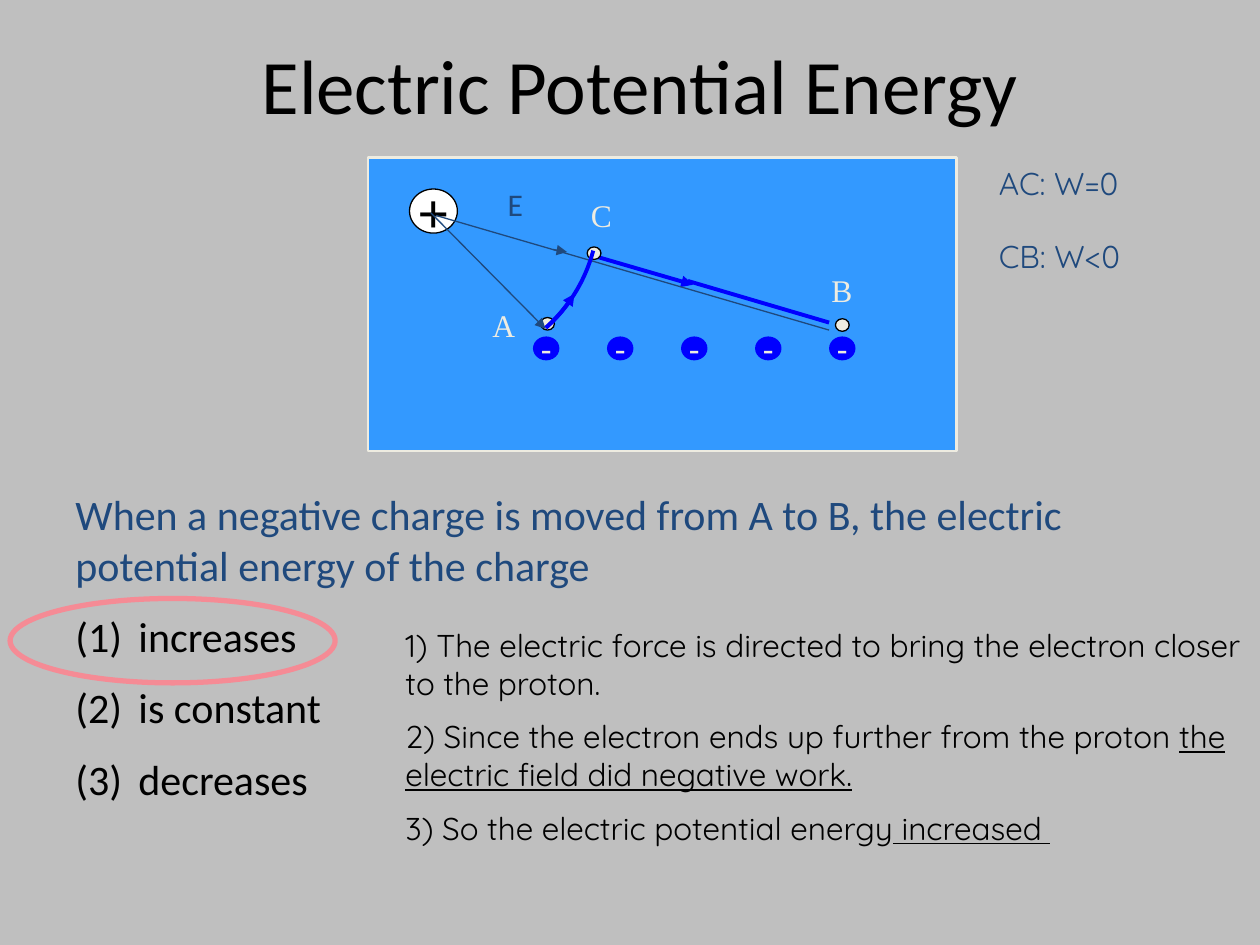
from dataclasses import dataclass
from math import cos, radians, sin

from lxml import etree
from pptx import Presentation
from pptx import util as u
from pptx.dml.color import RGBColor
from pptx.enum import shapes, text
from pptx.oxml.ns import qn


@dataclass(frozen=True)
class Theme:
    back: str = "BFBFBF"
    panel: str = "3399FF"
    cream: str = "EEECE1"
    black: str = "000000"
    white: str = "FFFFFF"
    blue: str = "0000FF"
    navy: str = "1F497D"
    pink: str = "F58B95"
    sans: str = "Calibri"
    serif: str = "Times New Roman"
    rounded: str = "Quicksand"
    title: int = 44
    plus: int = 32
    body: int = 24
    minus: int = 20
    small: int = 18


@dataclass(frozen=True)
class Style:
    name: str
    size: int
    color: str
    bold: bool = False


@dataclass(frozen=True)
class Span:
    text: str
    style: Style
    underline: bool = False


@dataclass(frozen=True)
class Label:
    left: float
    top: float
    width: float
    height: float
    paras: list[list[Span]]
    centered: bool = False
    hanging: float = 0


@dataclass(frozen=True)
class Oval:
    left: float
    top: float
    width: float
    height: float
    fill: str | None = None
    line: str | None = None
    weight: float = 0.75
    sign: Span | None = None


@dataclass(frozen=True)
class Path:
    start: tuple[float, float]
    end: tuple[float, float]
    color: str
    weight: float
    arrow: bool = False


THEME = Theme()
LETTER = Style(THEME.serif, THEME.small, THEME.cream)
FIELD = Style(THEME.sans, THEME.small, THEME.navy)
NOTE = Style(THEME.rounded, THEME.small, THEME.black)
WORK = Style(THEME.rounded, THEME.small, THEME.navy)
TITLE = Style(THEME.sans, THEME.title, THEME.black)
QUESTION = Style(THEME.sans, THEME.body, THEME.navy)
CHOICE = Style(THEME.sans, THEME.body, THEME.black)
PLUS = Style(THEME.serif, THEME.plus, THEME.black, True)
MINUS = Style(THEME.sans, THEME.minus, THEME.cream)

CHARGE_CENTER = (3.5, 1.67)
ARC_RADIUS = 1.25
ANGLE_A, ANGLE_ARROW, ANGLE_C = 48.2, 32, 14.8


def write_span(para, span: Span) -> None:
    run = para.add_run()
    run.text = span.text
    style = span.style
    values = {"name": style.name, "size": u.Pt(style.size), "bold": style.bold,
              "underline": span.underline}
    for key, value in values.items():
        setattr(run.font, key, value)
    run.font.color.rgb = RGBColor.from_string(style.color)


def paint(shape, fill: str | None, line: str | None, weight: float) -> None:
    shape.shadow.inherit = False
    for target, color in ((shape.fill, fill), (shape.line.fill, line)):
        if color:
            target.solid()
            target.fore_color.rgb = RGBColor.from_string(color)
        else:
            target.background()
    if line:
        shape.line.width = u.Pt(weight)


def add_arrowhead(shape) -> None:
    etree.SubElement(shape.line._get_or_add_ln(), qn("a:tailEnd"), type="triangle")


def add_label(page, label: Label) -> None:
    box = page.shapes.add_textbox(*map(u.Inches, (label.left, label.top, label.width, label.height)))
    frame = box.text_frame
    frame.word_wrap = True
    for index, spans in enumerate(label.paras):
        para = frame.paragraphs[0] if index == 0 else frame.add_paragraph()
        if index:
            para.space_before = u.Pt(spans[0].style.size / 2)
        if label.centered:
            para.alignment = text.PP_ALIGN.CENTER
        if label.hanging:
            indent = u.Inches(label.hanging)
            properties = para._p.get_or_add_pPr()
            properties.set("marL", str(indent))
            properties.set("indent", str(-indent))
        for span in spans:
            write_span(para, span)


def add_oval(page, oval: Oval) -> None:
    shape = page.shapes.add_shape(
        shapes.MSO_SHAPE.OVAL, *map(u.Inches, (oval.left, oval.top, oval.width, oval.height)))
    paint(shape, oval.fill, oval.line, oval.weight)
    if oval.sign:
        frame = shape.text_frame
        frame.word_wrap = False
        frame.vertical_anchor = text.MSO_ANCHOR.MIDDLE
        para = frame.paragraphs[0]
        para.alignment = text.PP_ALIGN.CENTER
        write_span(para, oval.sign)


def add_path(page, path: Path) -> None:
    line = page.shapes.add_connector(
        shapes.MSO_CONNECTOR.STRAIGHT, *map(u.Inches, (*path.start, *path.end)))
    line.line.color.rgb = RGBColor.from_string(path.color)
    line.line.width = u.Pt(path.weight)
    if path.arrow:
        add_arrowhead(line)
    etree.SubElement(line._element.spPr, qn("a:effectLst"))


def add_arc(page, first: float, last: float, arrow: bool = False, steps: int = 24) -> None:
    angles = [radians(first + (last - first) * step / steps) for step in range(steps + 1)]
    points = [(u.Inches(CHARGE_CENTER[0] + ARC_RADIUS * cos(angle)),
               u.Inches(CHARGE_CENTER[1] + ARC_RADIUS * sin(angle))) for angle in angles]
    builder = page.shapes.build_freeform(*points[0])
    builder.add_line_segments(points[1:], close=False)
    arc = builder.convert_to_shape()
    paint(arc, None, THEME.blue, 2.25)
    if arrow:
        add_arrowhead(arc)


def add_point(page, left: float, top: float) -> None:
    add_oval(page, Oval(left, top, 0.11, 0.1, THEME.cream, THEME.black))


def main() -> None:
    deck = Presentation()
    deck.slide_width, deck.slide_height = u.Inches(10), u.Inches(7.5)
    page = deck.slides.add_slide(deck.slide_layouts[6])
    page.background.fill.solid()
    page.background.fill.fore_color.rgb = RGBColor.from_string(THEME.back)

    panel = page.shapes.add_shape(
        shapes.MSO_SHAPE.RECTANGLE, *map(u.Inches, (2.92, 1.25, 4.67, 2.33)))
    paint(panel, THEME.panel, THEME.cream, 1.5)

    add_point(page, 4.29, 2.52)
    add_point(page, 6.63, 2.53)
    add_oval(page, Oval(3.25, 1.5, 0.38, 0.35, THEME.white, THEME.black, sign=Span("+", PLUS)))
    for index in range(5):
        add_oval(page, Oval(4.23 + index * 0.5875, 2.67, 0.21, 0.19, THEME.blue,
                            sign=Span("-", MINUS)))

    choices = ("increases", "is constant", "decreases")
    question = "When a negative charge is moved from A to B, the electric potential energy of the charge"
    body = [[Span("\t", FIELD), Span(question, QUESTION)]]
    body += [[Span(f"\t({number})\t{choice}", CHOICE)] for number, choice in enumerate(choices, 1)]
    reasons = [
        [Span("1) The electric force is directed to bring the electron closer to the proton.", NOTE)],
        [Span("2) Since the electron ends up further from the proton ", NOTE),
         Span("the electric field did negative work.", NOTE, True), Span(" ", NOTE)],
        [Span("3) So the electric potential energy", NOTE), Span(" increased ", NOTE, True)],
    ]
    add_label(page, Label(0.33, 0.25, 9.5, 0.83, [[Span("Electric Potential Energy", TITLE)]], True))
    add_label(page, Label(0, 3.83, 9.25, 2.73, body, hanging=0.5))
    add_oval(page, Oval(0.08, 4.75, 2.58, 0.67, line=THEME.pink, weight=3))
    add_label(page, Label(3.12, 4.92, 6.83, 1.9, reasons))

    for path in (
        Path((4.71, 2.03), (5.5, 2.26), THEME.blue, 2.25, True),
        Path((5.46, 2.23), (6.58, 2.56), THEME.blue, 2.25),
        Path((4.39, 1.98), (4.5, 2), THEME.navy, 0.75, True),
        Path((3.42, 1.69), (4.33, 2.61), THEME.navy, 0.75, True),
        Path((3.46, 1.71), (6.58, 2.62), THEME.navy, 0.75),
    ):
        add_path(page, path)

    for name, left, top, width, style in (
        ("A", 3.81, 2.38, 0.5, LETTER),
        ("B", 6.5, 2.1, 0.52, LETTER),
        ("C", 4.59, 1.51, 0.52, LETTER),
        ("E", 3.93, 1.42, 0.5, FIELD),
        ("AC: W=0", 7.83, 1.25, 2.17, WORK),
        ("CB: W<0", 7.83, 1.83, 2.17, WORK),
    ):
        add_label(page, Label(left, top, width, 0.5, [[Span(name, style)]]))

    add_point(page, 4.66, 1.96)
    add_arc(page, ANGLE_A, ANGLE_C)
    add_arc(page, ANGLE_A, ANGLE_ARROW, arrow=True)
    deck.save("out.pptx")


if __name__ == "__main__":
    main()
